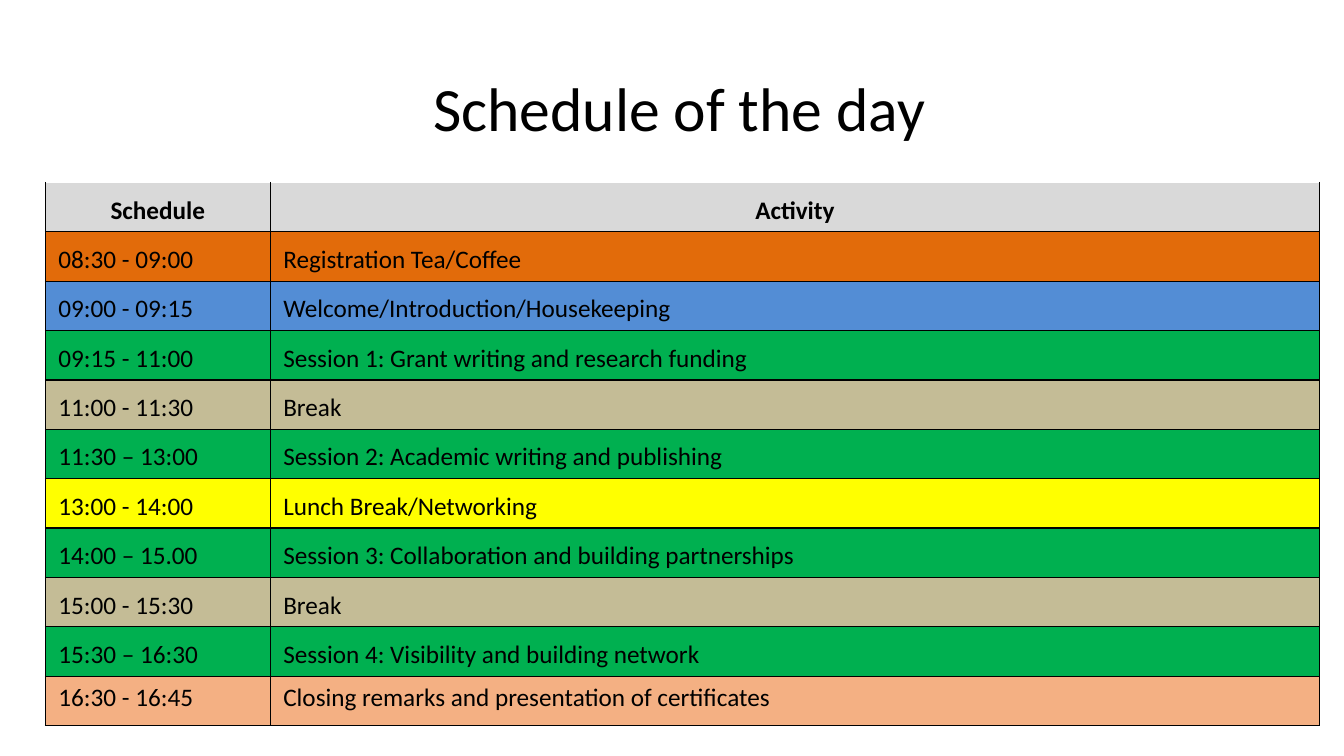
import pptx
import pptx.dml.color
import pptx.enum.text
import pptx.oxml
import pptx.oxml.ns
import pptx.util

Inches = pptx.util.Inches
Align = pptx.enum.text.PP_ALIGN
Anchor = pptx.enum.text.MSO_ANCHOR

COLORS = {
    "text": "000000",
    "header": "D9D9D9",
    "registration": "E26B0A",
    "welcome": "538DD5",
    "session": "00B050",
    "break": "C4BC96",
    "lunch": "FFFF00",
    "closing": "F4B083",
}

SCHEDULE = [
    ("header", "Schedule", "Activity"),
    ("registration", "08:30 - 09:00", "Registration Tea/Coffee"),
    ("welcome", "09:00 - 09:15", "Welcome/Introduction/Housekeeping"),
    ("session", "09:15 - 11:00", "Session 1: Grant writing and research funding"),
    ("break", "11:00 - 11:30", "Break"),
    ("session", "11:30 – 13:00", "Session 2: Academic writing and publishing"),
    ("lunch", "13:00 - 14:00", "Lunch Break/Networking"),
    ("session", "14:00 – 15.00", "Session 3: Collaboration and building partnerships"),
    ("break", "15:00 - 15:30", "Break"),
    ("session", "15:30 – 16:30", "Session 4: Visibility and building network"),
    ("closing", "16:30 - 16:45", "Closing remarks and presentation of certificates"),
]


def apply_format(target, values):
    for name, value in values.items():
        setattr(target, name, value)


def rgb(name):
    return pptx.dml.color.RGBColor.from_string(COLORS[name])


class ScheduleSlide:
    """Holds the text style and the current slide, and adds its elements."""

    def __init__(self, presentation, font="Calibri"):
        self.slide = presentation.slides.add_slide(presentation.slide_layouts[5])
        self.font = font

    def set_text(self, text_frame, text, size, bold, paragraph_format):
        text_frame.text = text
        paragraph = text_frame.paragraphs[0]
        apply_format(paragraph, paragraph_format)
        font = paragraph.runs[0].font
        apply_format(font, {"name": self.font, "size": pptx.util.Pt(size), "bold": bold})
        font.color.rgb = rgb("text")

    def title(self, text, left, top, width, height):
        shape = self.slide.shapes.title
        apply_format(shape, {"left": Inches(left), "top": Inches(top),
                             "width": Inches(width), "height": Inches(height)})
        apply_format(shape.text_frame,
                     {"vertical_anchor": Anchor.MIDDLE, "word_wrap": True})
        self.set_text(shape.text_frame, text, 44, False,
                      {"alignment": Align.CENTER, "line_spacing": 0.9})

    def borders(self, cell, sides):
        properties = cell._tc.get_or_add_tcPr()
        for index, side in enumerate(sides):
            properties.insert(index, pptx.oxml.parse_xml(
                f'<a:ln{side} {pptx.oxml.ns.nsdecls("a")} w="12700"><a:solidFill>'
                f'<a:srgbClr val="{COLORS["text"]}"/></a:solidFill></a:ln{side}>'))

    def cell(self, cell, text, color, alignment, anchor):
        is_header = color == "header"
        apply_format(cell, {"margin_left": Inches(0.13), "margin_right": Inches(0.13),
                            "margin_top": Inches(0.02), "margin_bottom": 0,
                            "vertical_anchor": anchor})
        self.set_text(cell.text_frame, text, 18, is_header,
                      {"alignment": alignment, "line_spacing": 1.15,
                       "space_after": pptx.util.Pt(10)})
        cell.fill.solid()
        cell.fill.fore_color.rgb = rgb(color)
        self.borders(cell, "LRB" if is_header else "LRTB")

    def table(self, rows, left, top, column_widths, row_height):
        table = self.slide.shapes.add_table(
            len(rows), len(column_widths), Inches(left), Inches(top),
            Inches(sum(column_widths)), Inches(row_height * len(rows))).table
        apply_format(table, {"first_row": False, "horz_banding": False})
        for column, width in zip(table.columns, column_widths):
            column.width = Inches(width)
        for row, (color, *texts) in zip(table.rows, rows):
            row.height = Inches(row_height)
            alignments = {"header": (Align.CENTER, Align.CENTER),
                          "closing": (Align.LEFT, Align.LEFT)}.get(
                              color, (Align.JUSTIFY, Align.LEFT))
            anchor = Anchor.TOP if color == "closing" else Anchor.MIDDLE
            for cell, text, alignment in zip(row.cells, texts, alignments):
                self.cell(cell, text, color, alignment, anchor)


def main():
    presentation = pptx.Presentation()
    apply_format(presentation,
                 {"slide_width": Inches(13.33), "slide_height": Inches(7.5)})
    page = ScheduleSlide(presentation)
    page.title("Schedule of the day", 0.61, 0.7, 12.26, 0.81)
    page.table(SCHEDULE, 0.45, 1.81, (2.23, 10.41), 0.49)
    presentation.save("out.pptx")


if __name__ == "__main__":
    main()
